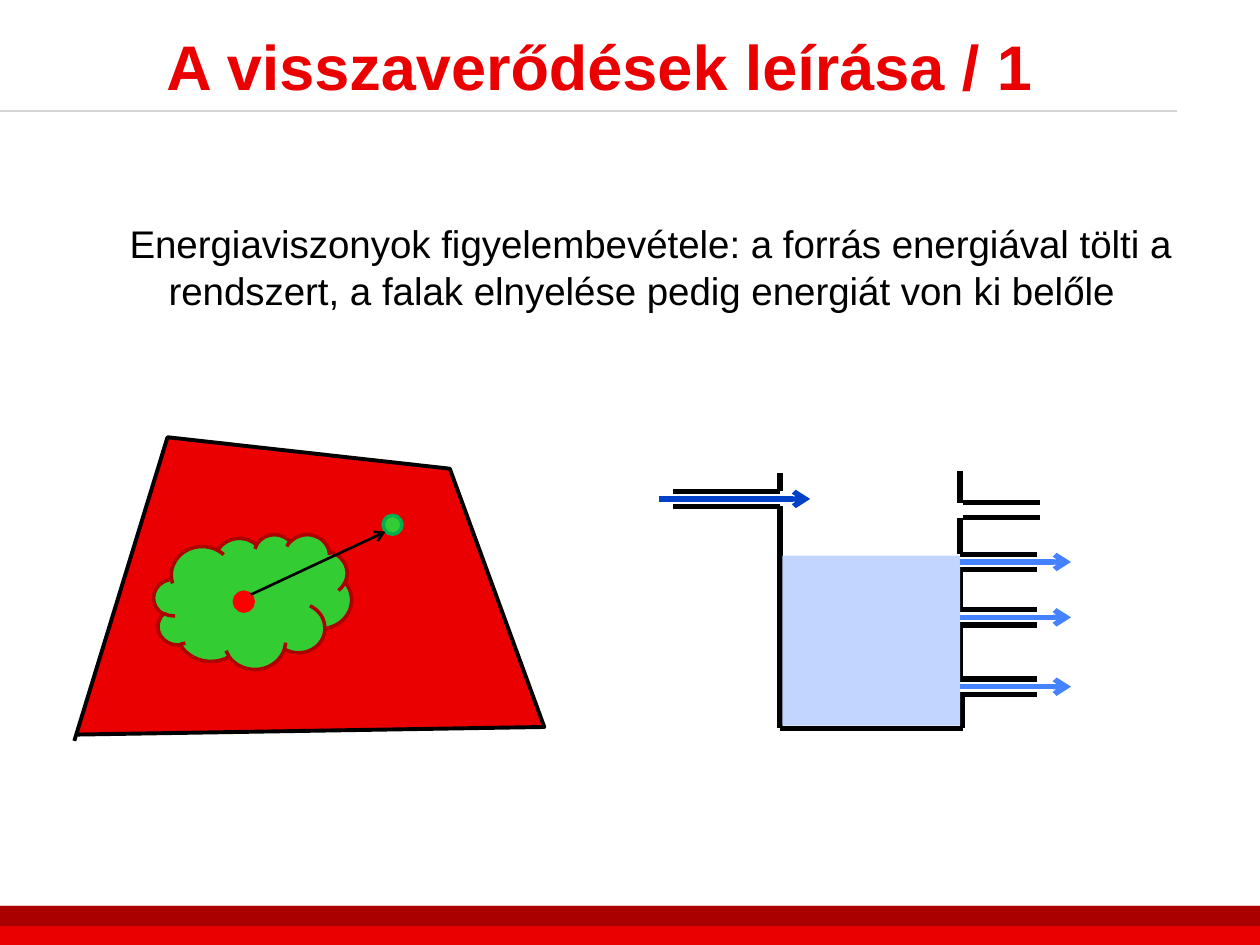
from typing import NamedTuple

from lxml.etree import SubElement
from pptx import Presentation
from pptx.dml.color import RGBColor
from pptx.enum.shapes import MSO_CONNECTOR, MSO_SHAPE
from pptx.enum.text import MSO_ANCHOR, MSO_AUTO_SIZE, PP_ALIGN
from pptx.oxml.ns import qn
from pptx.util import Inches, Pt

BLACK = "000000"
RED = "EA0000"
GREEN = "33CC33"
LIGHT_BLUE = "4482FF"

TANK_LEFT, TANK_RIGHT, TANK_BOTTOM = 6.19, 7.62, 5.78
CORNER_RIGHT = 7.64
PIPE_GAP = 0.12
PIPE_LENGTH = 0.61


class Figure(NamedTuple):
    preset: MSO_SHAPE
    left: float
    top: float
    width: float
    height: float
    fill: str
    outline: str | None = None


class Line(NamedTuple):
    x1: float
    y1: float
    x2: float
    y2: float
    color: str = BLACK
    width: float = 3
    arrow: bool = False


BARS = [
    Figure(MSO_SHAPE.RECTANGLE, 0, 7.19, 10, 0.31, RED),
    Figure(MSO_SHAPE.RECTANGLE, 0, 7.19, 10, 0.16, "AA0000"),
]
ROOM_OUTLINE = [(0.59, 5.88), (1.33, 3.47), (3.57, 3.72), (4.32, 5.77), (0.62, 5.83)]
SOUND_FIELD = [
    Figure(MSO_SHAPE.CLOUD, 1.22, 4.24, 1.57, 1.07, GREEN, "AD0000"),
    Figure(MSO_SHAPE.OVAL, 1.86, 4.7, 0.15, 0.15, "FF0000", "FF0000"),
    Figure(MSO_SHAPE.OVAL, 3.04, 4.09, 0.15, 0.15, GREEN, "00B050"),
]
WATER = Figure(MSO_SHAPE.RECTANGLE, 6.21, 4.41, 1.41, 1.35, "C1D5FF")


def rgb(value: str) -> RGBColor:
    return RGBColor.from_string(value)


def style_shape(shape, fill: str, outline: str | None, width: float = 2) -> None:
    shape.shadow.inherit = False
    shape.fill.solid()
    shape.fill.fore_color.rgb = rgb(fill)
    if outline is None:
        shape.line.fill.background()
    else:
        shape.line.color.rgb = rgb(outline)
        shape.line.width = Pt(width)


def draw_figure(slide, figure: Figure) -> None:
    box = (figure.left, figure.top, figure.width, figure.height)
    shape = slide.shapes.add_shape(figure.preset, *map(Inches, box))
    style_shape(shape, figure.fill, figure.outline)


def draw_line(slide, line: Line) -> None:
    ends = map(Inches, (line.x1, line.y1, line.x2, line.y2))
    connector = slide.shapes.add_connector(MSO_CONNECTOR.STRAIGHT, *ends)
    connector.line.color.rgb = rgb(line.color)
    connector.line.width = Pt(line.width)
    properties = connector.element.spPr
    if line.arrow:
        SubElement(properties.find(qn("a:ln")), qn("a:tailEnd"), type="arrow")
    SubElement(properties, qn("a:effectLst"))


def draw_pipe(slide, left: float, top: float, length: float) -> None:
    for y in (top, top + PIPE_GAP):
        draw_line(slide, Line(left, y, left + length, y))


def draw_room(slide) -> None:
    points = [(Inches(x), Inches(y)) for x, y in ROOM_OUTLINE]
    builder = slide.shapes.build_freeform(*points[0])
    builder.add_line_segments(points[1:], close=False)
    style_shape(builder.convert_to_shape(), RED, BLACK, 2.25)
    for figure in SOUND_FIELD:
        draw_figure(slide, figure)
    draw_line(slide, Line(1.99, 4.72, 3.06, 4.22, width=1.5, arrow=True))


def draw_tank(slide) -> None:
    outlets = (4.4, 4.84, 5.39)
    inlet = 3.9
    draw_pipe(slide, 5.34, inlet, TANK_LEFT - 5.34)
    draw_pipe(slide, CORNER_RIGHT, 3.99, PIPE_LENGTH)
    for top in outlets:
        draw_pipe(slide, TANK_RIGHT, top, PIPE_LENGTH)

    for x, top, bottom in (
        (TANK_LEFT, 3.75, inlet),
        (TANK_LEFT, inlet + PIPE_GAP, TANK_BOTTOM),
        (TANK_RIGHT, 3.74, 3.99),
        (TANK_RIGHT, 4.11, outlets[0]),
        (TANK_RIGHT, outlets[0] + PIPE_GAP, outlets[1]),
        (TANK_RIGHT, outlets[1] + PIPE_GAP, outlets[2]),
        (CORNER_RIGHT, outlets[2] + PIPE_GAP, TANK_BOTTOM),
    ):
        draw_line(slide, Line(x, top, x, bottom))
    draw_line(slide, Line(TANK_LEFT, TANK_BOTTOM, CORNER_RIGHT, TANK_BOTTOM))

    draw_figure(slide, WATER)
    draw_line(slide, Line(5.23, 3.96, 6.43, 3.96, "0042C7", arrow=True))
    for top in outlets:
        y = top + PIPE_GAP / 2
        draw_line(slide, Line(TANK_RIGHT, y, 8.5, y, LIGHT_BLUE, arrow=True))


def write_text(shape, text: str, size: float, color: str, bold: bool = False):
    """Write one left-aligned paragraph and return it."""
    frame = shape.text_frame
    frame.word_wrap = True
    frame.auto_size = MSO_AUTO_SIZE.NONE
    paragraph = frame.paragraphs[0]
    paragraph.alignment = PP_ALIGN.LEFT
    run = paragraph.add_run()
    run.text = text
    run.font.name = "Arial"
    run.font.size = Pt(size)
    run.font.bold = bold
    run.font.color.rgb = rgb(color)
    return paragraph


def add_texts(slide) -> None:
    title = slide.shapes.title
    title.left, title.top, title.width, title.height = map(Inches, (1.22, 0.08, 8.74, 0.87))
    title.text_frame.vertical_anchor = MSO_ANCHOR.MIDDLE
    write_text(title, "A visszaverődések leírása / 1", 36, RED, bold=True)

    body = slide.shapes.add_textbox(*map(Inches, (0.43, 1.7, 9, 0.82)))
    paragraph = write_text(
        body,
        "Energiaviszonyok figyelembevétele: a forrás energiával tölti a "
        "rendszert, a falak elnyelése pedig energiát von ki belőle",
        22,
        BLACK,
    )
    properties = paragraph._p.get_or_add_pPr()
    properties.set("marL", str(Inches(0.81)))
    properties.set("indent", str(Inches(-0.31)))


def main() -> None:
    presentation = Presentation()
    presentation.slide_width = Inches(10)
    presentation.slide_height = Inches(7.5)
    slide = presentation.slides.add_slide(presentation.slide_layouts[5])
    for bar in BARS:
        draw_figure(slide, bar)
    draw_line(slide, Line(0, 0.88, 9.34, 0.88, "D4D4D4", 1.5))
    add_texts(slide)
    draw_room(slide)
    draw_tank(slide)
    presentation.save("out.pptx")


if __name__ == "__main__":
    main()
